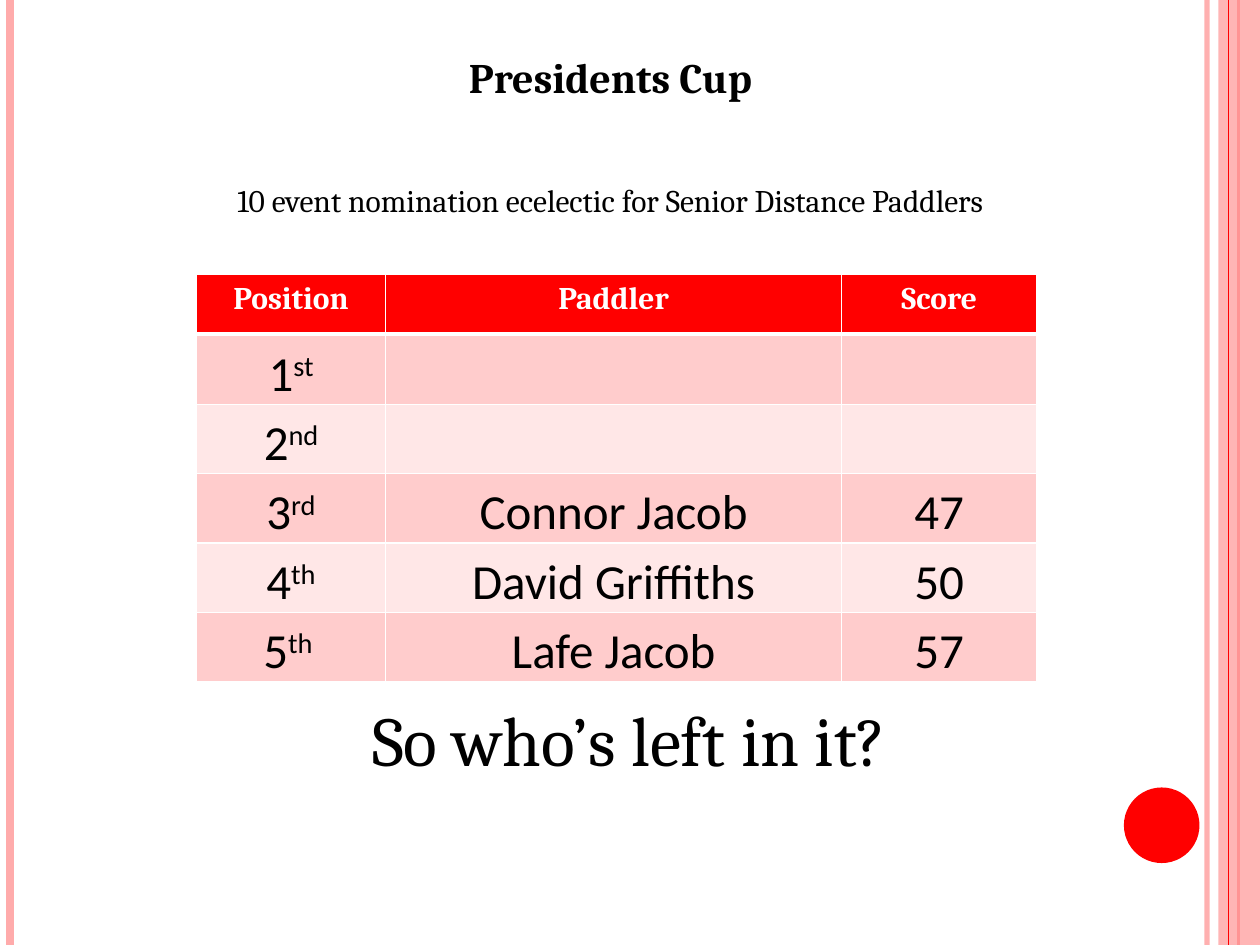
from lxml import etree
from pptx import Presentation
from pptx.dml.color import RGBColor
from pptx.enum.shapes import MSO_CONNECTOR, MSO_SHAPE
from pptx.enum.text import MSO_ANCHOR, MSO_AUTO_SIZE, PP_ALIGN
from pptx.oxml.ns import qn
from pptx.util import Inches, Pt

STRAIGHT = MSO_CONNECTOR.STRAIGHT
RECTANGLE, OVAL = MSO_SHAPE.RECTANGLE, MSO_SHAPE.OVAL
BOTTOM = MSO_ANCHOR.BOTTOM
GROW = MSO_AUTO_SIZE.SHAPE_TO_FIT_TEXT
CENTER = PP_ALIGN.CENTER

COLORS = {
    "red": "FF0000",
    "pink": "FFABAB",
    "odd_row": "FFCCCC",
    "even_row": "FFE7E7",
    "text": "000000",
    "white": "FFFFFF",
}
HEADINGS = ["Position", "Paddler", "Score"]
STANDINGS = [
    ("1", "st", "", ""),
    ("2", "nd", "", ""),
    ("3", "rd", "Connor Jacob", "47"),
    ("4", "th", "David Griffiths", "50"),
    ("5", "th ", "Lafe Jacob", "57"),
]
COLUMN_WIDTHS = [1.5, 3.62, 1.55]
ROW_HEIGHTS = [0.47, 0.56, 0.55, 0.55, 0.55, 0.55]


def rgb(name):
    """Return the named palette colour."""
    return RGBColor.from_string(COLORS[name])


def set_alpha(fill, percent):
    """Set the opacity of a solid fill element."""
    etree.SubElement(fill[0], qn("a:alpha"), val=str(percent * 1000))


def add_run(paragraph, text, size, font, color="text", bold=False):
    """Append a styled run to a centred paragraph."""
    paragraph.alignment = CENTER
    run = paragraph.add_run()
    run.text = text
    run.font.size, run.font.name, run.font.bold = Pt(size), font, bold
    run.font.color.rgb = rgb(color)
    return run


def add_stripe(slide, x, height, color, width, alpha=100):
    """Draw a vertical line down the slide."""
    stripe = slide.shapes.add_connector(STRAIGHT, Inches(x), 0, Inches(x), Inches(height))
    stripe.line.color.rgb = rgb(color)
    stripe.line.width = Pt(width)
    properties = stripe._element.spPr
    if alpha < 100:
        set_alpha(properties.find(qn("a:ln")).find(qn("a:solidFill")), alpha)
    etree.SubElement(properties, qn("a:effectLst"))


def add_block(slide, kind, left, top, width, height, color):
    """Place a plain filled shape without outline."""
    block = slide.shapes.add_shape(kind, Inches(left), Inches(top), Inches(width), Inches(height))
    block.shadow.inherit = False
    block.fill.solid()
    block.fill.fore_color.rgb = rgb(color)
    block.line.fill.background()
    return block


def add_frame(slide, width, height):
    """Draw the stripes, side band and disc around the slide."""
    add_stripe(slide, width - 0.42, height, "pink", 3, alpha=93)
    add_stripe(slide, 0.08, height, "pink", 4.5)
    add_stripe(slide, width - 0.17, height, "red", 1.5)
    band = add_block(slide, RECTANGLE, width - 0.33, 0, 0.33, height, "pink")
    set_alpha(band._element.spPr.find(qn("a:solidFill")), 87)
    add_stripe(slide, width - 0.25, height, "red", 0.75)
    add_block(slide, OVAL, width - 1.08, height - 1.25, 0.6, 0.6, "red")


def add_caption(slide, left, top, width, height, text, size, bold=False):
    """Place one centred line of text."""
    caption = slide.shapes.add_textbox(Inches(left), Inches(top), Inches(width), Inches(height))
    frame = caption.text_frame
    frame.word_wrap = True
    frame.auto_size = GROW
    add_run(frame.paragraphs[0], text, size, "Cambria", bold=bold)


def style_cell(cell, color, bottom_border=1):
    """Fill a cell and give it white borders."""
    properties = cell._tc.get_or_add_tcPr()
    for side, width in (("L", 1), ("R", 1), ("T", 1), ("B", bottom_border)):
        border = etree.SubElement(properties, qn(f"a:ln{side}"), w=str(Pt(width)))
        solid = etree.SubElement(border, qn("a:solidFill"))
        etree.SubElement(solid, qn("a:srgbClr"), val=COLORS["white"])
    cell.fill.solid()
    cell.fill.fore_color.rgb = rgb(color)


def set_margins(cell, side, bottom=0):
    """Set narrow margins and anchor the cell text at the bottom."""
    cell.margin_left = cell.margin_right = cell.margin_top = Inches(side)
    cell.margin_bottom = Inches(bottom)
    cell.vertical_anchor = BOTTOM


def add_standings(slide, left, top):
    """Build the table of positions, paddlers and scores."""
    table = slide.shapes.add_table(
        len(ROW_HEIGHTS), len(COLUMN_WIDTHS), Inches(left), Inches(top),
        Inches(sum(COLUMN_WIDTHS)), Inches(sum(ROW_HEIGHTS))).table
    for column, width in zip(table.columns, COLUMN_WIDTHS):
        column.width = Inches(width)
    for row, height in zip(table.rows, ROW_HEIGHTS):
        row.height = Inches(height)

    for column, heading in enumerate(HEADINGS):
        cell = table.cell(0, column)
        style_cell(cell, "red", bottom_border=3)
        add_run(cell.text_frame.paragraphs[0], heading, 18, "Cambria", "white", True)

    for row, (number, suffix, *details) in enumerate(STANDINGS, 1):
        for column, text in enumerate([number, *details]):
            cell = table.cell(row, column)
            style_cell(cell, "odd_row" if row % 2 else "even_row",
                       bottom_border=1)
            if not text:
                continue
            set_margins(cell, 0 if column else 0.01)
            paragraph = cell.text_frame.paragraphs[0]
            add_run(paragraph, text, 28, "Calibri")
            if column == 0:
                ordinal = add_run(paragraph, suffix, 28, "Calibri")
                ordinal._r.get_or_add_rPr().set("baseline", "30000")


def main():
    """Build and save the Presidents Cup slide."""
    width, height = 10, 7.5
    presentation = Presentation()
    presentation.slide_width, presentation.slide_height = Inches(width), Inches(height)
    slide = presentation.slides.add_slide(presentation.slide_layouts[6])
    add_frame(slide, width, height)
    add_caption(slide, 0.83, 0.36, 8.03, 0.5, "Presidents Cup", 24, bold=True)
    add_caption(slide, 0.83, 1.39, 8.03, 0.4,
                "10 event nomination ecelectic for Senior Distance Paddlers", 18)
    add_standings(slide, 1.56, 2.18)
    add_caption(slide, 0.98, 5.48, 8.03, 0.77, "So who’s left in it?", 40)
    presentation.save("out.pptx")


if __name__ == "__main__":
    main()
